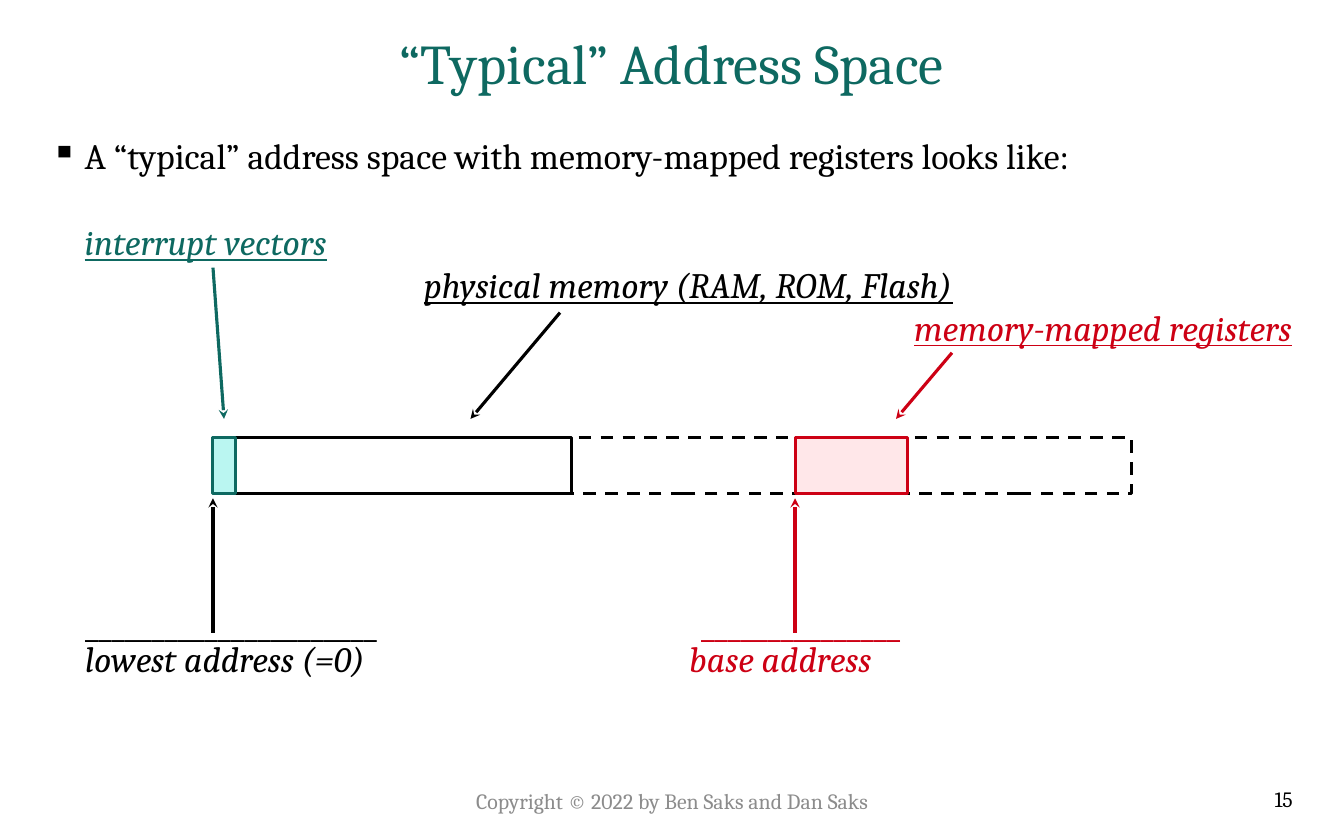
from dataclasses import dataclass

from lxml import etree
from pptx import Presentation
from pptx.dml.color import RGBColor
from pptx.enum.dml import MSO_LINE
from pptx.enum.shapes import MSO_CONNECTOR, MSO_SHAPE
from pptx.enum.text import MSO_ANCHOR, PP_ALIGN
from pptx.oxml.ns import qn
from pptx.util import Cm, Pt

LEFT, MID, RIGHT = PP_ALIGN.LEFT, PP_ALIGN.CENTER, PP_ALIGN.RIGHT
TOP, CENTER, BOTTOM = MSO_ANCHOR.TOP, MSO_ANCHOR.MIDDLE, MSO_ANCHOR.BOTTOM
RECT, LINE, DASH = MSO_SHAPE.RECTANGLE, MSO_CONNECTOR.STRAIGHT, MSO_LINE.DASH


@dataclass(frozen=True)
class Theme:
    font: str = "Cambria"
    ink: str = "000000"
    teal: str = "0E6961"
    aqua: str = "BAF6F1"
    red: str = "CD0014"
    pink: str = "FFE7E9"
    gray: str = "8C8C8C"
    title: int = 36
    body: int = 23
    small: int = 14
    stroke: int = 2


T = Theme()
INDENT = 0.76  # cm


def rgb(code):
    return RGBColor.from_string(code)


def add_box(slide, box, anchor=TOP, pad=True):
    frame = slide.shapes.add_textbox(*map(Cm, box)).text_frame
    frame.word_wrap = True
    frame.vertical_anchor = anchor
    if not pad:
        for side in ("left", "right", "top", "bottom"):
            setattr(frame, f"margin_{side}", 0)
    return frame


def write(para, text, size, color, form=None, font=None):
    for name, value in (form or {}).items():
        setattr(para, name, value)
    run = para.add_run()
    run.text = text
    look = {"name": T.font, "size": Pt(size), **(font or {})}
    for name, value in look.items():
        setattr(run.font, name, value)
    run.font.color.rgb = rgb(color)


def indent(para, left, first=0, mark=None):
    props = para._p.get_or_add_pPr()
    props.set("marL", str(Cm(left)))
    props.set("indent", str(Cm(first)))
    if mark:
        etree.SubElement(props, qn("a:buChar")).set("char", mark)


def add_line(slide, text, box, size, color, align, anchor):
    frame = add_box(slide, box, anchor)
    write(frame.paragraphs[0], text, size, color, {"alignment": align})


def add_body(slide, box):
    frame = add_box(slide, box)
    lead = frame.paragraphs[0]
    indent(lead, INDENT, -INDENT, "▪")
    write(lead, "A “typical” address space with memory-mapped registers looks like:",
          T.body, T.ink)
    labels = (
        ("interrupt vectors", T.teal, LEFT, 27.7),
        ("physical memory (RAM, ROM, Flash)", T.ink, MID, 0),
        ("memory-mapped registers", T.red, RIGHT, 0),
    )
    for text, color, align, gap in labels:
        para = frame.add_paragraph()
        indent(para, INDENT)
        write(para, text, T.body, color,
              {"level": 1, "alignment": align, "space_before": Pt(gap)},
              {"italic": True, "underline": True})


def add_note(slide, box, text, color, count, shift=0):
    """A rule of underscores with an address name below it."""
    frame = add_box(slide, box, pad=False)
    rule, name = frame.paragraphs[0], frame.add_paragraph()
    indent(rule, shift)
    write(rule, "_" * count, T.body, color)
    write(name, text, T.body, color, {"line_spacing": Pt(22)}, {"italic": True})


def add_bar(slide, box):
    """Address space, its parts given in tenths of an inch along the bar."""
    left, top, width, height = box
    step = width / 82
    parts = (
        (2, 30, None, T.ink, None),
        (0, 2, T.aqua, T.teal, None),
        (32, 20, None, T.ink, DASH),
        (62, 20, None, T.ink, DASH),
        (52, 10, T.pink, T.red, None),
    )
    group = slide.shapes.add_group_shape()
    for start, span, fill, color, dash in parts:
        part = group.shapes.add_shape(RECT, Cm(left + start * step), Cm(top),
                                      Cm(span * step), Cm(height))
        part.shadow.inherit = False
        if fill:
            part.fill.solid()
            part.fill.fore_color.rgb = rgb(fill)
        else:
            part.fill.background()
        part.line.color.rgb = rgb(color)
        part.line.width = Pt(T.stroke)
        if dash:
            part.line.dash_style = dash


def add_arrow(slide, ends, color):
    arrow = slide.shapes.add_connector(LINE, *map(Cm, ends))
    arrow.line.color.rgb = rgb(color)
    arrow.line.width = Pt(T.stroke)
    etree.SubElement(arrow.line._get_or_add_ln(), qn("a:tailEnd")).set("type", "stealth")
    etree.SubElement(arrow._element.spPr, qn("a:effectLst"))


def main():
    deck = Presentation()
    deck.slide_width, deck.slide_height = Cm(30.48), Cm(19.05)
    slide = deck.slides.add_slide(deck.slide_layouts[6])

    # Heading and labels
    add_line(slide, "“Typical” Address Space", (0.91, 0.64, 28.65, 1.52),
             T.title, T.teal, MID, CENTER)
    add_body(slide, (0.91, 2.92, 28.65, 14.73))

    # Address notes
    add_note(slide, (1.93, 13.67, 8, 2), "lowest address (=0)", T.ink, 22)
    add_note(slide, (15.63, 13.67, 7, 2), "base address", T.red, 15, 0.27)

    # Footer
    add_line(slide, "15", (24.69, 17.65, 4.88, 0.89), T.small, T.ink, RIGHT, BOTTOM)
    add_line(slide, "Copyright © 2022 by Ben Saks and Dan Saks",
             (6.1, 17.65, 18.29, 1.02), T.small, T.gray, MID, CENTER)

    # Memory bar and its arrows
    add_bar(slide, (4.83, 9.93, 20.83, 1.27))
    tip, low, high = 9.5, 14.35, 11.3
    for ends, color in (
        ((4.83, 6.07, 5.08, tip), T.teal),
        ((12.7, 7.09, 10.67, tip), T.ink),
        ((21.59, 8, 20.32, tip), T.red),
        ((4.83, low, 4.83, high), T.ink),
        ((18.03, low, 18.03, high), T.red),
    ):
        add_arrow(slide, ends, color)

    deck.save("out.pptx")


if __name__ == "__main__":
    main()
